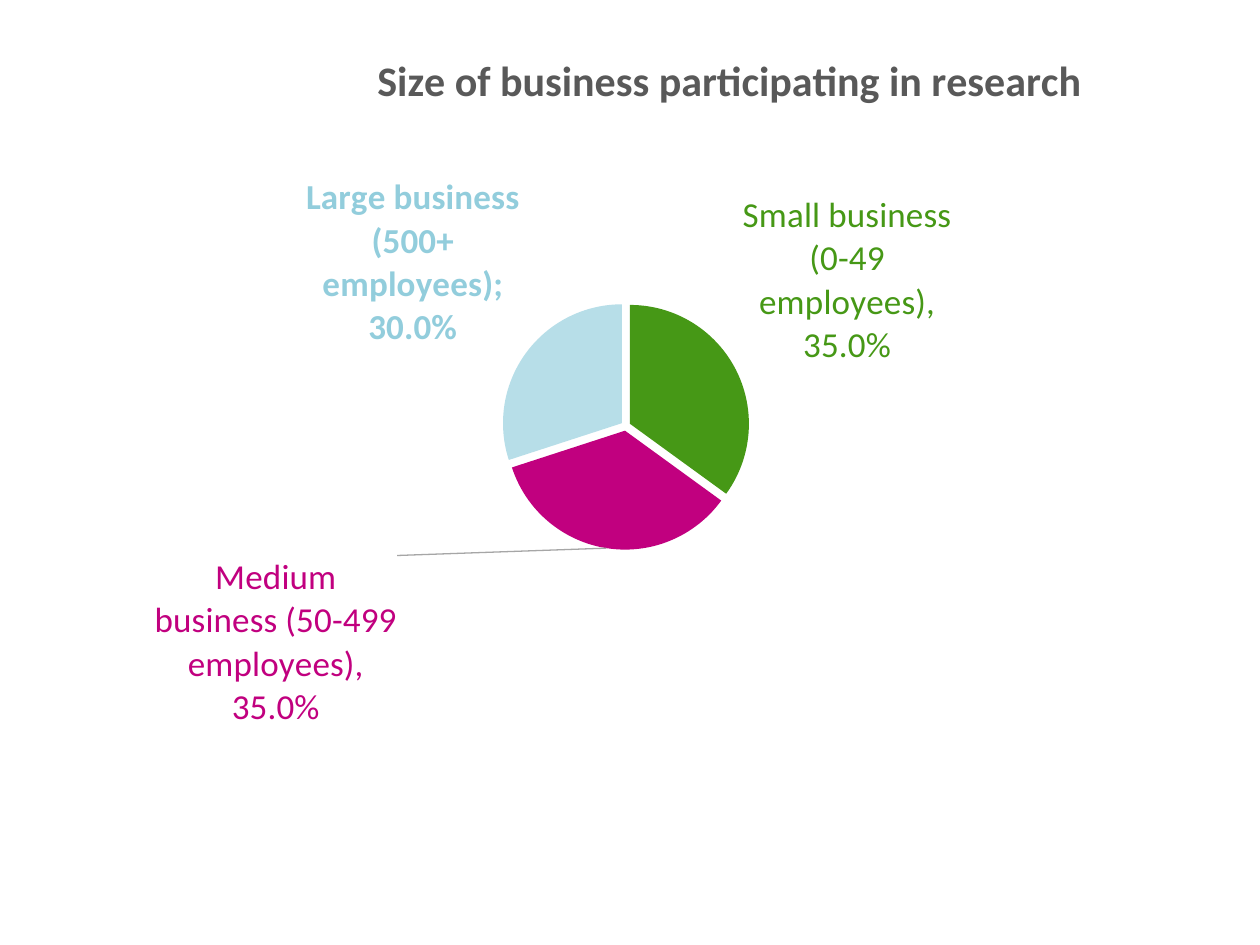
from dataclasses import dataclass

from lxml import etree
from pptx import Presentation
from pptx import util as u
from pptx.chart.data import CategoryChartData
from pptx.dml.color import RGBColor
from pptx.enum import chart as ch
from pptx.oxml import parse_xml
from pptx.oxml.ns import nsdecls, qn


@dataclass(frozen=True)
class Theme:
    face: str = "Calibri"
    head: str = "595959"
    fills: tuple = ("469816", "C1007F", "B7DEE8")
    inks: tuple = ("469816", "C1007F", "92CDDC")
    line: str = "A6A6A6"
    big: int = 24
    mid: int = 20


class Deck:
    def __init__(self, theme):
        self.theme = theme
        self.prs = Presentation()
        self.prs.slide_width, self.prs.slide_height = u.Cm(25.4), u.Cm(19.05)
        self.slide = self.prs.slides.add_slide(self.prs.slide_layouts[6])

    def style(self, font, size, ink, bold):
        font.name, font.size, font.bold = self.theme.face, u.Pt(size), bold
        font.color.rgb = RGBColor.from_string(ink)

    def layout(self, **spots):
        tags = "".join(f'<c:{tag} val="{val}"/>' for tag, val in spots.items())
        return parse_xml(
            f'<c:layout {nsdecls("c")}><c:manualLayout>{tags}'
            "</c:manualLayout></c:layout>")

    def place(self, node, after, spot):
        for old in node.findall(qn("c:layout")):
            node.remove(old)
        if after is None:
            node.insert(0, spot)
        else:
            node.find(qn(after)).addnext(spot)

    def pie(self, box, name, cats, vals):
        data = CategoryChartData(number_format="0.0%")
        data.categories = cats
        data.add_series(name, vals)
        frame = self.slide.shapes.add_chart(
            ch.XL_CHART_TYPE.PIE, *[u.Cm(side) for side in box], data)
        chart = frame.chart
        chart.has_legend = False
        chart.font.name, chart.font.size = self.theme.face, u.Pt(10)
        chart.plots[0].vary_by_categories = True
        self.head(chart, name)
        area = chart._chartSpace.chart.plotArea
        self.place(area, None, self.layout(
            layoutTarget="inner", xMode="edge", yMode="edge",
            x=0.41, y=0.345, w=0.202, h=0.338))
        return chart.plots[0].series[0]

    def head(self, chart, name):
        chart.has_title = True
        title = chart.chart_title
        title.text_frame.text = name
        run = title.text_frame.paragraphs[0].runs[0]
        self.style(run.font, self.theme.big, self.theme.head, True)
        self.place(title._element, "c:tx", self.layout(
            xMode="edge", yMode="edge", x=0.302, y=0.002))

    def paint(self, row, gap):
        for i, tint in enumerate(self.theme.fills):
            fill = row.points[i].format.fill
            fill.solid()
            fill.fore_color.rgb = RGBColor.from_string(tint)
        burst = parse_xml(f'<c:explosion {nsdecls("c")} val="{gap}"/>')
        row._element.find(qn("c:dPt")).addprevious(burst)

    def labels(self, row):
        tags = row.data_labels
        tags.show_value = tags.show_category_name = True
        tags.number_format, tags.number_format_is_linked = "0.0%", False
        tags.position = ch.XL_LABEL_POSITION.OUTSIDE_END
        self.style(tags.font, self.theme.mid, "4F81BD", True)
        lead = parse_xml(
            f'<c:leaderLines {nsdecls("c", "a")}><c:spPr><a:ln w="9525">'
            f'<a:solidFill><a:srgbClr val="{self.theme.line}"/></a:solidFill>'
            "</a:ln></c:spPr></c:leaderLines>")
        tags._element.find(qn("c:showLeaderLines")).addnext(lead)

    def label(self, row, i, words=None, shift=None, size=None):
        tag = row.points[i].data_label
        if words:
            tag.text_frame.text = words
            font = tag.text_frame.paragraphs[0].runs[0].font
        else:
            font = tag.font
        self.style(font, self.theme.mid, self.theme.inks[i], not words)
        tag.position = ch.XL_LABEL_POSITION.OUTSIDE_END
        node = row.data_labels._element.findall(qn("c:dLbl"))[i]
        for key in ("c:showVal", "c:showCatName"):
            node.find(qn(key)).set("val", "1")
        if not words:
            mark = etree.SubElement(node, qn("c:separator"))
            mark.text = "; "
            node.find(qn("c:showBubbleSize")).addnext(mark)
        if shift:
            self.place(node, "c:idx", self.layout(x=shift[0], y=shift[1]))
        if size:
            node.append(self.extent(*size))

    def extent(self, wide, high):
        return parse_xml(
            f'<c:extLst {nsdecls("c")}>'
            '<c:ext uri="{CE6537A1-D6FC-4f65-9D91-7224C49458BB}" '
            'xmlns:c15="http://schemas.microsoft.com/office/drawing/2012/chart">'
            f'<c15:layout><c:manualLayout><c:w val="{wide}"/>'
            f'<c:h val="{high}"/></c:manualLayout></c15:layout>'
            "</c:ext></c:extLst>")


def main():
    deck = Deck(Theme())
    cats = [
        "Small business (0-49 employees)",
        "Medium business (50-499 employees)",
        "Large business (500+ employees)",
    ]
    vals = [0.35, 0.35, 0.3]
    row = deck.pie((0, 0.86, 24.69, 15.04),
                   "Size of business participating in research", cats, vals)
    deck.paint(row, 4)
    deck.labels(row)
    deck.label(row, 0, f"{cats[0]}, {vals[0]:.1%}")
    deck.label(row, 1, f"{cats[1]}, {vals[1]:.1%}", (-0.17, 0), (0.16, 0.28))
    deck.label(row, 2)
    deck.prs.save("out.pptx")


if __name__ == "__main__":
    main()
